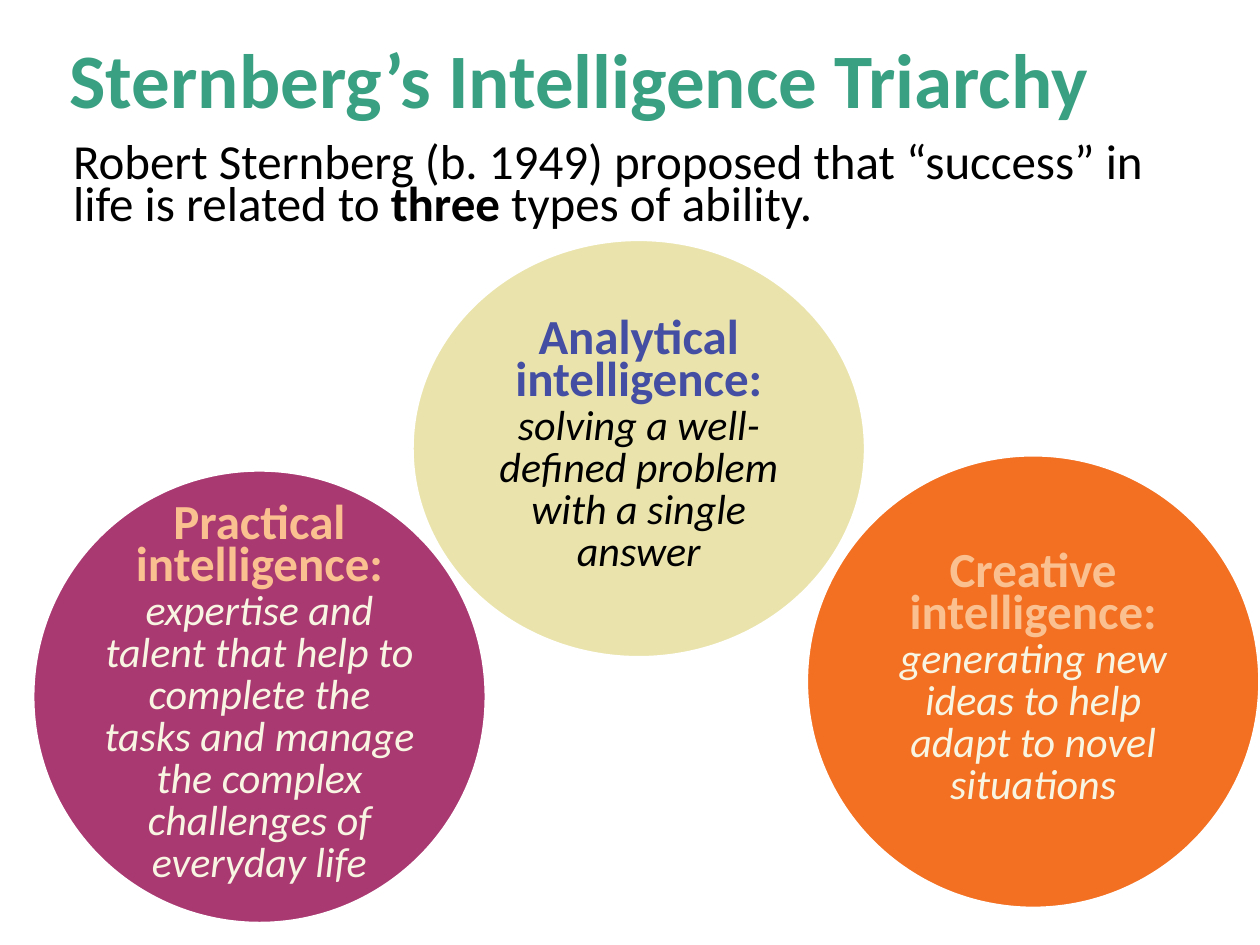
from dataclasses import dataclass

from pptx import Presentation
from pptx.dml.color import RGBColor
from pptx.enum.shapes import MSO_SHAPE
from pptx.enum.text import MSO_ANCHOR, MSO_AUTO_SIZE, PP_ALIGN
from pptx.oxml.ns import qn
from pptx.util import Inches, Pt


@dataclass(frozen=True)
class Theme:
    font: str = "Calibri"
    title_size: int = 44
    heading_size: int = 28
    detail_size: int = 24
    line_spacing: int = 24
    outline_width: int = 2
    white: str = "FFFFFF"
    black: str = "000000"
    green: str = "3AA082"
    plum: str = "A93971"
    sand: str = "EAE4AC"
    orange: str = "F36F21"
    peach: str = "FAC090"
    cream: str = "F8F6E3"
    indigo: str = "444EA2"


THEME = Theme()
CIRCLE_WIDTH = 3.6
CIRCLE_INSET = 0.03

ABILITIES = [
    (0.26, 3.73, 3.6, THEME.plum, "Practical intelligence: ", THEME.peach,
     "expertise and talent that help to complete the tasks and manage "
     "the complex challenges of everyday life", THEME.cream),
    (3.27, 1.9, 3.32, THEME.sand, "Analytical intelligence: ", THEME.indigo,
     "solving a well-defined problem with a single answer", THEME.black),
    (6.4, 3.61, 3.6, THEME.orange, "Creative intelligence: ", THEME.peach,
     "generating new ideas to help adapt to novel situations", THEME.cream),
]


def place(shape, left, top, width, height):
    shape.left, shape.top = Inches(left), Inches(top)
    shape.width, shape.height = Inches(width), Inches(height)


def prepare_text(shape, alignment):
    text_frame = shape.text_frame
    text_frame.word_wrap = True
    text_frame.auto_size = MSO_AUTO_SIZE.NONE
    text_frame.vertical_anchor = MSO_ANCHOR.MIDDLE
    paragraph = text_frame.paragraphs[0]
    paragraph.alignment = alignment
    paragraph.space_before = Pt(0)
    return paragraph


def add_run(paragraph, text, size, color, bold=False, italic=False):
    run = paragraph.add_run()
    run.text = text
    run.font.name = THEME.font
    run.font.size = Pt(size)
    run.font.bold = bold
    run.font.italic = italic
    run.font.color.rgb = RGBColor.from_string(color)


def remove_bullet(paragraph):
    properties = paragraph._p.get_or_add_pPr()
    properties.set("marL", "0")
    properties.set("indent", "0")
    properties.append(properties.makeelement(qn("a:buNone"), {}))


def fill_title(slide):
    title = slide.shapes.title
    place(title, 0.26, 0.2, 8.68, 0.84)
    paragraph = prepare_text(title, PP_ALIGN.CENTER)
    add_run(paragraph, "Sternberg’s Intelligence Triarchy",
            THEME.title_size, THEME.green, bold=True)


def fill_introduction(slide):
    body = slide.placeholders[1]
    place(body, 0.48, 0.62, 8.78, 1.77)
    paragraph = prepare_text(body, PP_ALIGN.LEFT)
    paragraph.line_spacing = Pt(THEME.line_spacing)
    paragraph.space_after = Pt(12)
    remove_bullet(paragraph)
    for text, bold in [
        ("Robert Sternberg (b. 1949) proposed that “success” in life is related to ", False),
        ("three", True),
        (" types of ability.", False),
    ]:
        add_run(paragraph, text, THEME.heading_size, THEME.black, bold=bold)


def add_ability_circle(slide, left, top, height, fill, heading, heading_color,
                       detail, detail_color):
    circle = slide.shapes.add_shape(
        MSO_SHAPE.OVAL, Inches(left), Inches(top), Inches(CIRCLE_WIDTH), Inches(height))
    circle.shadow.inherit = False
    circle.fill.solid()
    circle.fill.fore_color.rgb = RGBColor.from_string(fill)
    circle.line.color.rgb = RGBColor.from_string(THEME.white)
    circle.line.width = Pt(THEME.outline_width)
    text_frame = circle.text_frame
    text_frame.margin_left = text_frame.margin_right = Inches(CIRCLE_INSET)
    text_frame.margin_top = text_frame.margin_bottom = Inches(CIRCLE_INSET)
    paragraph = prepare_text(circle, PP_ALIGN.CENTER)
    paragraph.line_spacing = Pt(THEME.line_spacing)
    add_run(paragraph, heading, THEME.heading_size, heading_color, bold=True)
    add_run(paragraph, detail, THEME.detail_size, detail_color, italic=True)


def main():
    presentation = Presentation()
    presentation.slide_width = Inches(10)
    presentation.slide_height = Inches(7.5)
    slide = presentation.slides.add_slide(presentation.slide_layouts[1])
    fill_title(slide)
    fill_introduction(slide)
    for ability in ABILITIES:
        add_ability_circle(slide, *ability)
    presentation.save("out.pptx")


if __name__ == "__main__":
    main()
